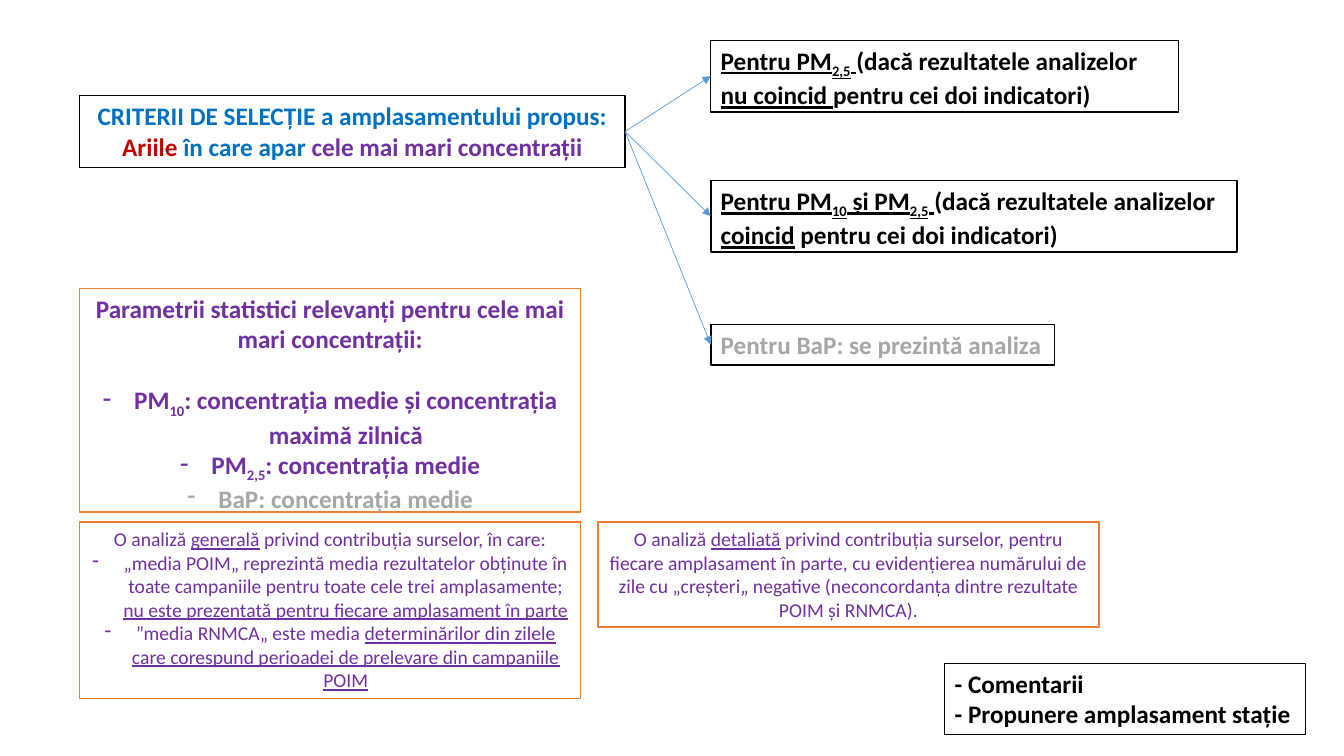
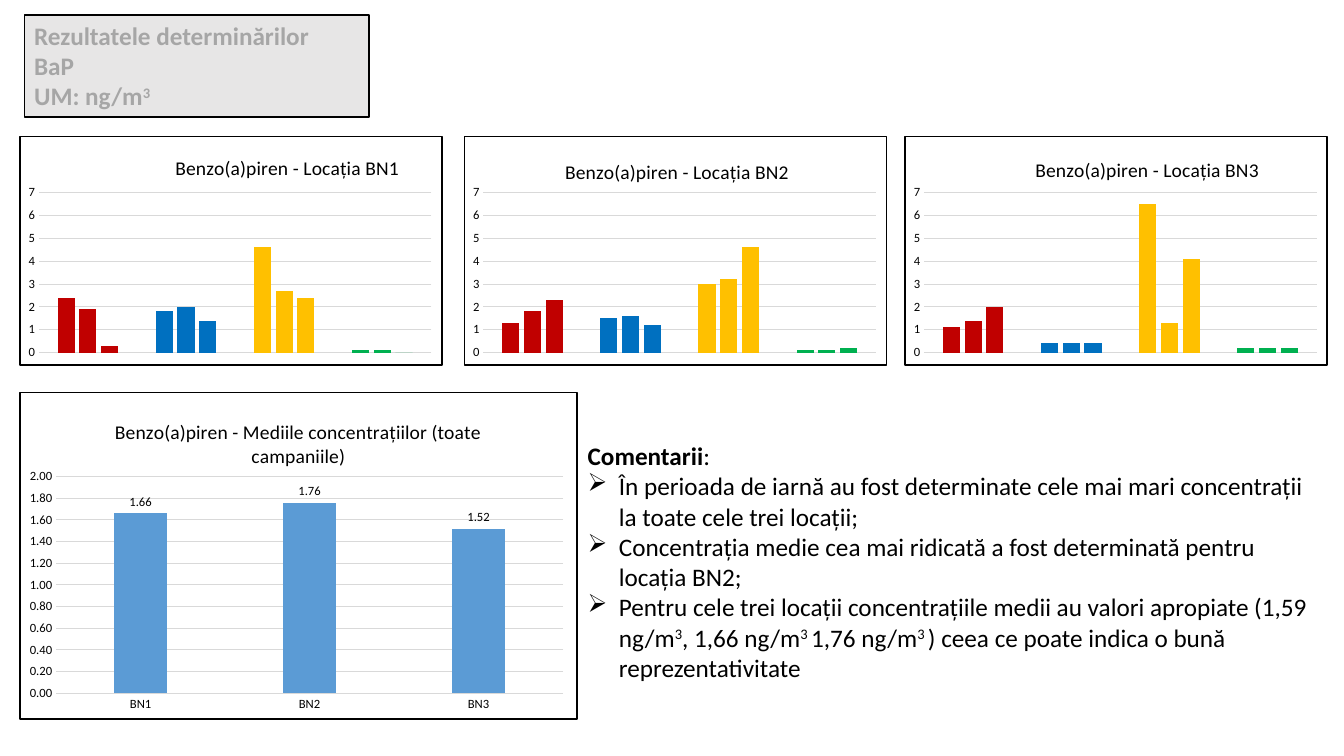
from lxml import etree
from pptx import Presentation
from pptx.chart.data import CategoryChartData
from pptx.dml.color import RGBColor
from pptx.enum.chart import XL_CHART_TYPE as ChartType
from pptx.enum.chart import XL_LABEL_POSITION as LabelPosition
from pptx.enum.chart import XL_TICK_MARK as TickMark
from pptx.enum.shapes import MSO_CONNECTOR as Connector
from pptx.enum.shapes import MSO_SHAPE as Shape
from pptx.enum.text import MSO_ANCHOR as Anchor
from pptx.enum.text import PP_ALIGN as Align
from pptx.oxml import parse_xml
from pptx.oxml.ns import nsdecls, qn
from pptx.util import Inches, Pt

BLACK = RGBColor(0x00, 0x00, 0x00)
WHITE = RGBColor(0xFF, 0xFF, 0xFF)
BLUE = RGBColor(0x00, 0x70, 0xC0)
RED = RGBColor(0xC0, 0x00, 0x00)
PURPLE = RGBColor(0x70, 0x30, 0xA0)
YELLOW = RGBColor(0xFF, 0xC0, 0x00)
GREEN = RGBColor(0x00, 0xB0, 0x50)
ORANGE = RGBColor(0xED, 0x7D, 0x31)
GRAY = RGBColor(0xA6, 0xA6, 0xA6)
PALE_GRAY = RGBColor(0xE7, 0xE6, 0xE6)
GRID_GRAY = RGBColor(0xD9, 0xD9, 0xD9)
SKY = RGBColor(0x5B, 0x9B, 0xD5)

FONT = "Calibri"
BODY = {"name": FONT, "size": Pt(18), "bold": False, "rgb": BLACK}
HEAVY = {**BODY, "bold": True}
HEAVY_PURPLE = {**HEAVY, "rgb": PURPLE}
HEAVY_GRAY = {**HEAVY, "rgb": GRAY}
SMALL_PURPLE = {**BODY, "size": Pt(14), "rgb": PURPLE}
AXIS = {"name": FONT, "size": Pt(9), "rgb": BLACK}
CHART_TITLE = {"name": FONT, "size": Pt(14), "bold": False, "rgb": BLACK}

UNDER = {"underline": True}
SUB = {"baseline": -25000}
SUPER = {"baseline": 30000}
UNDER_SUB = {**UNDER, **SUB}
DASH = {"bullet": "-"}
ARROW = {"bullet": "➢"}
SEASON_COLORS = (RED, BLUE, YELLOW, GREEN)


def apply_font(font, style):
    for key, value in style.items():
        if key == "rgb":
            font.color.rgb = value
        elif key != "baseline":
            setattr(font, key, value)


def format_para(para, align, bullet=None, after=0):
    para.alignment = align
    para.space_after = Pt(after)
    if bullet:
        props = para._p.get_or_add_pPr()
        props.set("marL", str(Inches(0.31)))
        props.set("indent", str(-Inches(0.31)))
        etree.SubElement(props, qn("a:buChar")).set("char", bullet)


def write_text(frame, paras, base, align):
    frame.word_wrap = True
    frame.vertical_anchor = Anchor.TOP
    for index, (spans, options) in enumerate(paras):
        para = frame.paragraphs[0] if index == 0 else frame.add_paragraph()
        format_para(para, align, **options)
        for text, extra in spans:
            span = para.add_run()
            span.text = text
            apply_font(span.font, {**base, **extra})
            if "baseline" in extra:
                span._r.get_or_add_rPr().set("baseline", str(extra["baseline"]))


def add_box(page, area, paras, base=HEAVY, line=BLACK, fill=WHITE, align=Align.LEFT):
    box = page.shapes.add_shape(Shape.RECTANGLE, *map(Inches, area))
    box.shadow.inherit = False
    box.fill.solid()
    box.fill.fore_color.rgb = fill
    box.line.color.rgb = line
    box.line.width = Pt(1)
    write_text(box.text_frame, paras, base, align)
    return box


def add_arrow(page, source, target):
    arrow = page.shapes.add_connector(Connector.STRAIGHT, 0, 0, 0, 0)
    arrow.begin_connect(source, 3)
    arrow.end_connect(target, 1)
    arrow.line.color.rgb = SKY
    arrow.line.width = Pt(0.5)
    head = etree.SubElement(arrow.line._get_or_add_ln(), qn("a:tailEnd"))
    head.set("type", "triangle")
    etree.SubElement(arrow._element.spPr, qn("a:effectLst"))


def set_layout(element, index, inner=False, **places):
    for old in element.findall(qn("c:layout")):
        element.remove(old)
    layout = etree.Element(qn("c:layout"))
    manual = etree.SubElement(layout, qn("c:manualLayout"))
    values = {"layoutTarget": "inner"} if inner else {}
    values.update(xMode="edge", yMode="edge", **places)
    for tag, value in values.items():
        etree.SubElement(manual, qn(f"c:{tag}")).set("val", str(value))
    element.insert(index, layout)


def frame_chart(chart):
    chart._chartSpace.chart.addnext(parse_xml(
        f'<c:spPr {nsdecls("c", "a")}><a:solidFill><a:srgbClr val="{WHITE}"/></a:solidFill>'
        f'<a:ln w="{Pt(1)}"><a:solidFill><a:srgbClr val="{BLACK}"/></a:solidFill></a:ln></c:spPr>'))


def add_columns(page, area, title, title_at, plot_at, categories, rows, top, unit, number_format):
    data = CategoryChartData()
    data.categories = categories
    for number, row in enumerate(rows, 1):
        data.add_series(f"Series {number}", row)
    chart = page.shapes.add_chart(ChartType.COLUMN_CLUSTERED, *map(Inches, area), data).chart
    chart.has_legend = False
    apply_font(chart.font, {**AXIS, "size": Pt(10)})
    frame_chart(chart)

    chart.has_title = True
    frame = chart.chart_title.text_frame
    frame.text = title
    for para in frame.paragraphs:
        apply_font(para.font, CHART_TITLE)
        for span in para.runs:
            apply_font(span.font, CHART_TITLE)
    chart.chart_title.include_in_layout = False
    set_layout(chart.chart_title._element, 1, x=title_at[0], y=title_at[1])
    set_layout(chart._chartSpace.chart.plotArea, 0, inner=True, **dict(zip("xywh", plot_at)))

    axis = chart.value_axis
    axis_values = {"minimum_scale": 0, "maximum_scale": top, "major_unit": unit,
                   "major_tick_mark": TickMark.NONE, "has_major_gridlines": True}
    for key, value in axis_values.items():
        setattr(axis, key, value)
    axis.tick_labels.number_format = number_format
    axis.tick_labels.number_format_is_linked = False
    apply_font(axis.tick_labels.font, AXIS)
    axis.format.line.fill.background()
    axis.major_gridlines.format.line.color.rgb = GRID_GRAY
    axis.major_gridlines.format.line.width = Pt(0.75)

    plot = chart.plots[0]
    for key, value in {"gap_width": 219, "overlap": -27, "vary_by_categories": False}.items():
        setattr(plot, key, value)
    return chart


def add_location_chart(page, left, name, title_at, rows):
    chart = add_columns(page, (left, 1.35, 4.2, 2.28), f"Benzo(a)piren - Locația {name}", title_at,
                        (0.045, 0.245, 0.93, 0.7), ("1", "2", "3", "4"), rows, 7, 1, "0")
    chart.category_axis.visible = False
    for series in chart.plots[0].series:
        for index, color in enumerate(SEASON_COLORS):
            fill = series.points[index].format.fill
            fill.solid()
            fill.fore_color.rgb = color


def add_mean_chart(page):
    chart = add_columns(page, (0.19, 3.89, 5.54, 3.25),
                        "Benzo(a)piren - Mediile concentrațiilor (toate\ncampaniile)", (0.165, 0.07),
                        (0.065, 0.257, 0.91, 0.664), ("BN1", "BN2", "BN3"), [(1.66, 1.76, 1.52)],
                        2, 0.2, "0.00")
    axis = chart.category_axis
    axis.major_tick_mark = TickMark.NONE
    axis.format.line.color.rgb = GRID_GRAY
    axis.format.line.width = Pt(0.75)
    apply_font(axis.tick_labels.font, AXIS)
    plot = chart.plots[0]
    fill = plot.series[0].format.fill
    fill.solid()
    fill.fore_color.rgb = SKY
    plot.has_data_labels = True
    labels = plot.data_labels
    label_values = {"show_value": True, "number_format": "0.00", "number_format_is_linked": False,
                    "position": LabelPosition.OUTSIDE_END}
    for key, value in label_values.items():
        setattr(labels, key, value)
    apply_font(labels.font, AXIS)


def build_criteria(page):
    criteria = add_box(page, (0.79, 0.95, 5.41, 0.71), [
        ([("CRITERII DE SELECȚIE a amplasamentului propus:", {})], {}),
        ([("Ariile", {"rgb": RED}), (" în care apar ", {}),
          ("cele mai mari concentrații", {"rgb": PURPLE})], {}),
    ], base={**HEAVY, "rgb": BLUE}, align=Align.CENTER)

    add_box(page, (0.79, 2.86, 4.97, 2.22), [
        ([("Parametrii statistici relevanți pentru cele mai mari concentrații:", {})], {"after": 22}),
        ([("PM", {}), ("10", SUB), (": concentrația medie și concentrația maximă zilnică", {})], DASH),
        ([("PM", {}), ("2,5", SUB), (": concentrația medie", {})], DASH),
        ([("BaP: concentrația medie", {"rgb": GRAY})], DASH),
    ], base=HEAVY_PURPLE, line=ORANGE, align=Align.CENTER)

    add_box(page, (9.37, 6.58, 3.58, 0.71), [
        ([("- Comentarii", {})], {}),
        ([("- Propunere amplasament stație", {})], {}),
    ])

    targets = [
        ((0.4, 4.64, 0.71), HEAVY, [
            ("Pentru PM", UNDER), ("2,5", UNDER_SUB), (" ", UNDER),
            ("(dacă rezultatele analizelor ", {}), ("nu coincid ", UNDER),
            ("pentru cei doi indicatori)", {})]),
        ((1.79, 5.22, 0.71), HEAVY, [
            ("Pentru PM", UNDER), ("10", UNDER_SUB), (" și PM", UNDER), ("2,5", UNDER_SUB),
            (" ", UNDER), ("(dacă rezultatele analizelor ", {}), ("coincid", UNDER),
            (" pentru cei doi indicatori)", {})]),
        ((3.22, 3.41, 0.4), HEAVY_GRAY, [("Pentru BaP: se prezintă analiza", {})]),
    ]
    for area, base, spans in targets:
        add_arrow(page, criteria, add_box(page, (7.05, *area), [(spans, {})], base=base))

    add_box(page, (0.79, 5.18, 4.97, 1.75), [
        ([("O analiză ", {}), ("generală", UNDER),
          (" privind contribuția surselor, în care:", {})], {}),
        ([("„media POIM„ reprezintă media rezultatelor obținute în toate campaniile pentru toate "
           "cele trei amplasamente; ", {}),
          ("nu este prezentată pentru fiecare amplasament în parte", UNDER)], DASH),
        ([("”media RNMCA„ este media ", {}),
          ("determinărilor din zilele care corespund perioadei de prelevare din campaniile POIM",
           UNDER)], DASH),
    ], base=SMALL_PURPLE, line=ORANGE, align=Align.CENTER)

    add_box(page, (5.93, 5.18, 4.97, 1.04), [
        ([("O analiză ", {}), ("detaliată", UNDER),
          (" privind contribuția surselor, pentru fiecare amplasament în parte, cu evidențierea "
           "numărului de zile cu „creșteri„ negative (neconcordanța dintre rezultate POIM și "
           "RNMCA).", {})], {}),
    ], base=SMALL_PURPLE, line=ORANGE, align=Align.CENTER)


def build_results(page):
    add_box(page, (0.24, 0.15, 3.42, 1.01), [
        ([("Rezultatele determinărilor", {})], {}),
        ([("BaP", {})], {}),
        ([("UM: ng/m", {}), ("3", SUPER)], {}),
    ], base=HEAVY_GRAY, fill=PALE_GRAY)

    comments = page.shapes.add_textbox(*map(Inches, (5.73, 4.32, 7.51, 2.52)))
    write_text(comments.text_frame, [
        ([("Comentarii", {"bold": True}), (":", {})], {}),
        ([("În perioada de iarnă au fost determinate cele mai mari concentrații la toate cele "
           "trei locații;", {})], ARROW),
        ([("Concentrația medie cea mai ridicată a fost determinată pentru locația BN2;", {})], ARROW),
        ([("Pentru cele trei locații concentrațiile medii au valori apropiate (1,59 ng/m", {}),
          ("3", SUPER), (", 1,66 ng/m", {}), ("3 ", SUPER), ("1,76 ng/m", {}), ("3 ", SUPER),
          (") ceea ce poate indica o bună reprezentativitate", {})], ARROW),
    ], BODY, Align.LEFT)

    locations = [
        (0.19, "BN1", (0.36, 0.06), [(2.4, 1.8, 4.6, 0.1), (1.9, 2, 2.7, 0.1), (0.3, 1.4, 2.4, 0)]),
        (4.6, "BN2", (0.23, 0.08), [(1.3, 1.5, 3, 0.1), (1.8, 1.6, 3.2, 0.1), (2.3, 1.2, 4.6, 0.2)]),
        (8.97, "BN3", (0.3, 0.07), [(1.1, 0.4, 6.5, 0.2), (1.4, 0.4, 1.3, 0.2), (2, 0.4, 4.1, 0.2)]),
    ]
    for location in locations:
        add_location_chart(page, *location)
    add_mean_chart(page)


def main():
    deck = Presentation()
    deck.slide_width = Inches(13.33)
    deck.slide_height = Inches(7.5)
    for build in (build_criteria, build_results):
        build(deck.slides.add_slide(deck.slide_layouts[6]))
    deck.save("out.pptx")


if __name__ == "__main__":
    main()
